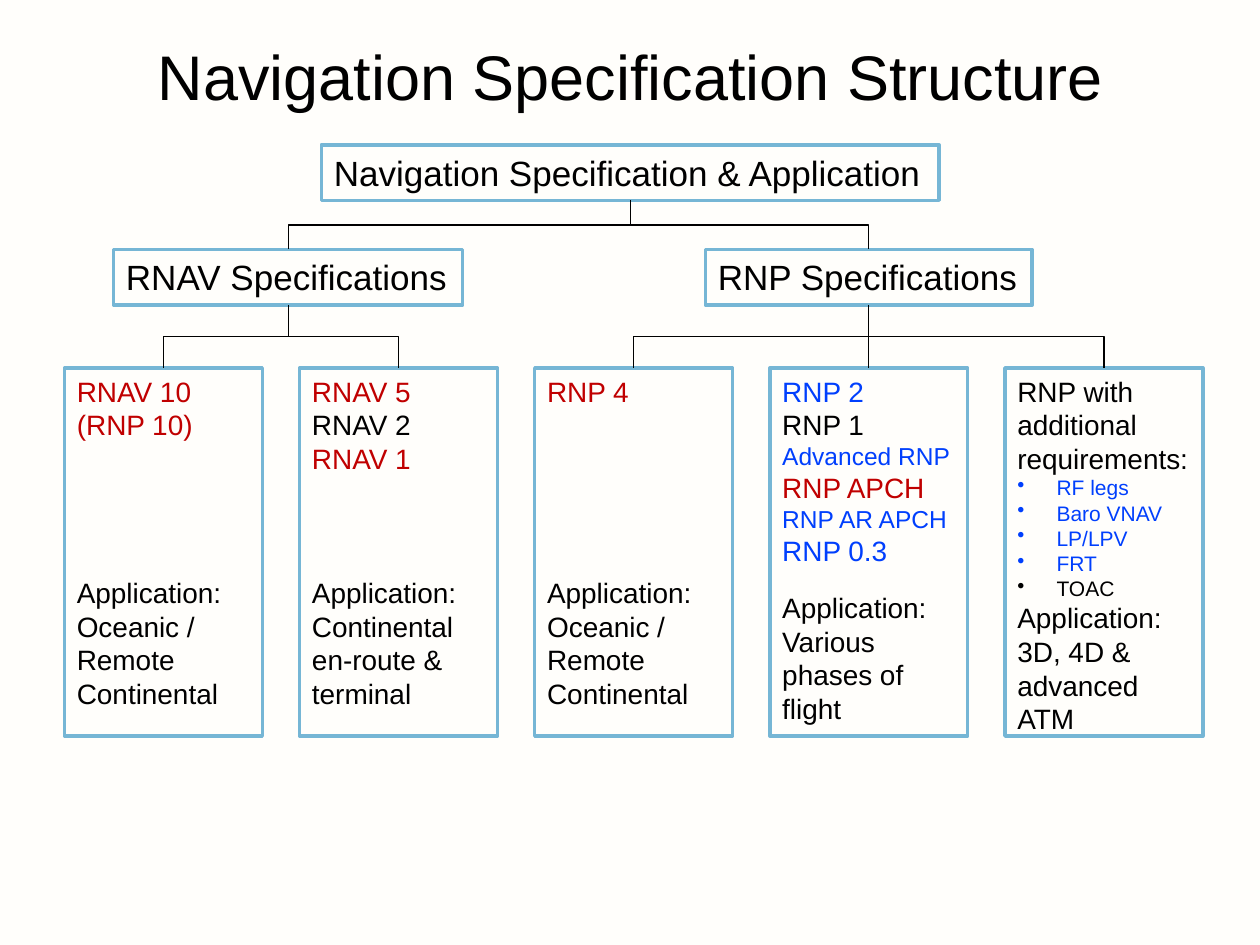
from dataclasses import dataclass

from lxml.etree import SubElement
from pptx import Presentation
from pptx.dml.color import RGBColor
from pptx.enum.shapes import MSO_CONNECTOR, MSO_SHAPE
from pptx.enum.text import MSO_ANCHOR, PP_ALIGN
from pptx.oxml.ns import qn
from pptx.util import Cm, Pt


@dataclass(frozen=True)
class Theme:
    font: str = "Arial"
    paper: str = "FFFEFB"
    border: str = "76B6D5"
    black: str = "000000"
    red: str = "C00000"
    blue: str = "003FFD"
    title: int = 36
    heading: int = 20
    body: int = 16
    small: int = 14
    bullet: int = 12
    leading: float = 1.2


THEME = Theme()


# Content: each line is a dict of text and what differs from the body style
def line(text, color=THEME.black, size=THEME.body, gap=0, bullet=False):
    return {"text": text, "color": color, "size": size, "gap": gap, "bullet": bullet}


def bullet(text, color=THEME.blue):
    return line(text, color, THEME.bullet, bullet=True)


def application(text, gap):
    return [line("Application:", gap=gap), line(text)]


BODY_LINE = THEME.body * THEME.leading
TITLE = "Navigation Specification Structure"
ROOT = "Navigation Specification & Application"
COLUMNS = [
    [line("RNAV 10", THEME.red), line("(RNP 10)", THEME.red),
     *application("Oceanic / Remote Continental", 4 * BODY_LINE)],
    [line("RNAV 5", THEME.red), line("RNAV 2"), line("RNAV 1", THEME.red),
     *application("Continental en-route & terminal", 3 * BODY_LINE)],
    [line("RNP 4", THEME.red),
     *application("Oceanic / Remote Continental", 5 * BODY_LINE)],
    [line("RNP 2", THEME.blue), line("RNP 1"),
     line("Advanced RNP", THEME.blue, THEME.small), line("RNP APCH", THEME.red),
     line("RNP AR APCH", THEME.blue, THEME.small), line("RNP 0.3", THEME.blue),
     *application("Various phases of flight", 13.2)],
    [line("RNP with additional requirements:"),
     bullet("RF legs"), bullet("Baro VNAV"), bullet("LP/LPV"), bullet("FRT"),
     bullet("TOAC", THEME.black),
     *application("3D, 4D & advanced ATM", 0)],
]
# Heading, left, width, indexes of the columns below it
GROUPS = [
    ("RNAV Specifications", 2.29, 7.04, (0, 1)),
    ("RNP Specifications", 14.22, 6.59, (2, 3, 4)),
]

# Layout in centimetres
HEADING_HEIGHT = 1.12
ROOT_TOP, GROUP_TOP, COLUMN_TOP = 2.92, 5.03, 7.42
COLUMN_LEFT, COLUMN_STEP, COLUMN_WIDTH, COLUMN_HEIGHT = 1.3, 4.74, 3.99, 7.42
BULLET_INDENT = Cm(0.79)


def write_lines(text_frame, lines, alignment=PP_ALIGN.LEFT):
    text_frame.word_wrap = True
    for index, item in enumerate(lines):
        paragraph = text_frame.add_paragraph() if index else text_frame.paragraphs[0]
        paragraph.alignment = alignment
        paragraph.line_spacing = Pt(item["size"] * THEME.leading)
        if item["gap"]:
            paragraph.space_before = Pt(item["gap"])
        if item["bullet"]:
            properties = paragraph._p.get_or_add_pPr()
            properties.set("marL", str(BULLET_INDENT))
            properties.set("indent", str(-BULLET_INDENT))
            SubElement(properties, qn("a:buChar")).set("char", "•")
        run = paragraph.add_run()
        run.text = item["text"]
        run.font.name = THEME.font
        run.font.size = Pt(item["size"])
        run.font.color.rgb = RGBColor.from_string(item["color"])


def add_box(slide, left, top, width, height, lines):
    shape = slide.shapes.add_shape(
        MSO_SHAPE.RECTANGLE, Cm(left), Cm(top), Cm(width), Cm(height))
    shape.shadow.inherit = False
    shape.fill.solid()
    shape.fill.fore_color.rgb = RGBColor.from_string(THEME.paper)
    shape.line.color.rgb = RGBColor.from_string(THEME.border)
    shape.line.width = Pt(2)
    shape.text_frame.vertical_anchor = MSO_ANCHOR.TOP
    write_lines(shape.text_frame, lines)
    return shape


def join(slide, parent, child):
    """Link the bottom of parent to the top of child, with an elbow if needed."""
    start_x, start_y = parent.left + parent.width // 2, parent.top + parent.height
    end_x, end_y = child.left + child.width // 2, child.top
    across, down = end_x - start_x, end_y - start_y
    bent = abs(across) > Cm(0.05)
    kind = MSO_CONNECTOR.ELBOW if bent else MSO_CONNECTOR.STRAIGHT
    connector = slide.shapes.add_connector(kind, start_x, start_y, end_x, end_y)
    connector.begin_connect(parent, 2)
    connector.end_connect(child, 0)
    connector.line.color.rgb = RGBColor.from_string(THEME.black)
    connector.line.width = Pt(0.75)
    properties = connector._element.spPr
    SubElement(properties, qn("a:effectLst"))
    if bent:
        # Turn the elbow a quarter so that it leaves and arrives vertically
        connector.width, connector.height = down, abs(across)
        connector.left = (start_x + end_x - down) // 2
        connector.top = (start_y + end_y - abs(across)) // 2
        transform = properties.find(qn("a:xfrm"))
        transform.set("rot", str((90 if across < 0 else 270) * 60000))
        transform.set("flipH", "0" if across < 0 else "1")


def main():
    presentation = Presentation()
    presentation.slide_width, presentation.slide_height = Cm(25.4), Cm(19.05)
    slide = presentation.slides.add_slide(presentation.slide_layouts[6])
    slide.background.fill.solid()
    slide.background.fill.fore_color.rgb = RGBColor.from_string(THEME.paper)

    # Title
    title = slide.shapes.add_textbox(Cm(0.71), Cm(0.53), Cm(24), Cm(1.98))
    title.text_frame.vertical_anchor = MSO_ANCHOR.MIDDLE
    write_lines(title.text_frame, [line(TITLE, size=THEME.title)], PP_ALIGN.CENTER)

    # Boxes, level by level
    root = add_box(slide, 6.48, ROOT_TOP, 12.45, HEADING_HEIGHT,
                   [line(ROOT, size=THEME.heading)])
    groups = [add_box(slide, left, GROUP_TOP, width, HEADING_HEIGHT,
                      [line(text, size=THEME.heading)])
              for text, left, width, _ in GROUPS]
    columns = [add_box(slide, COLUMN_LEFT + index * COLUMN_STEP, COLUMN_TOP,
                       COLUMN_WIDTH, COLUMN_HEIGHT, lines)
               for index, lines in enumerate(COLUMNS)]

    # Tree lines
    for group in groups:
        join(slide, root, group)
    for group, (*_, members) in zip(groups, GROUPS):
        for member in members:
            join(slide, group, columns[member])

    presentation.save("out.pptx")


if __name__ == "__main__":
    main()
